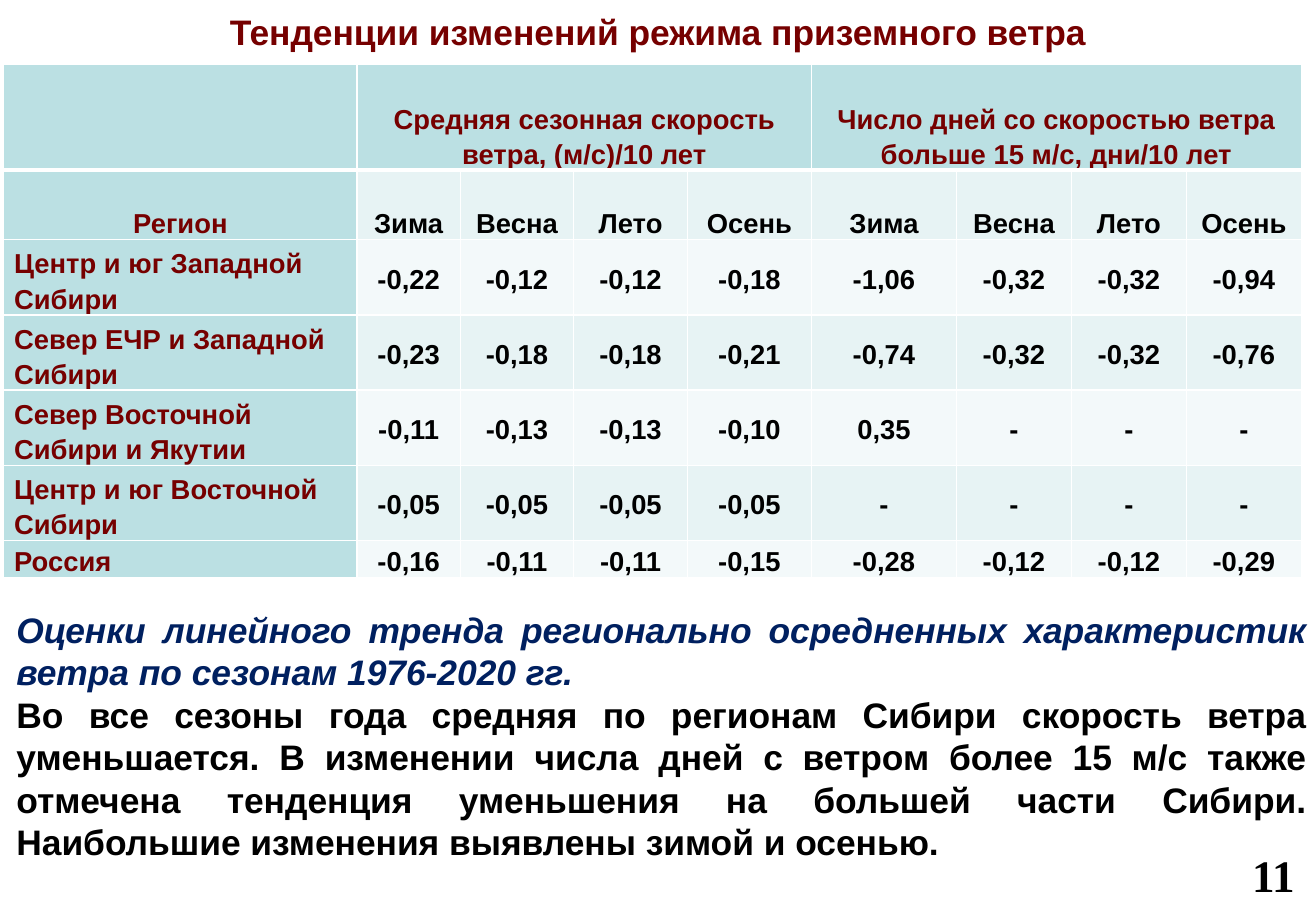
from dataclasses import dataclass

from lxml.etree import SubElement
from pptx import Presentation
from pptx.dml.color import RGBColor
from pptx.enum.text import MSO_ANCHOR as Anchor, MSO_AUTO_SIZE as AutoSize, PP_ALIGN as Align
from pptx.oxml.ns import qn
from pptx.util import Cm, Pt


@dataclass(frozen=True)
class Theme:
    maroon: str = "760000"
    navy: str = "002060"
    black: str = "000000"
    border: str = "FFFFFF"
    header_fill: str = "BBE0E3"
    odd_fill: str = "E7F3F4"
    even_fill: str = "F3F9FA"
    font: str = "Arial"
    number_font: str = "Times New Roman"
    table_size: int = 17
    text_size: int = 22
    number_size: int = 28


THEME = Theme()

TITLE = "Тенденции изменений режима приземного ветра"
CAPTION = ("Оценки линейного тренда регионально осредненных характеристик "
           "ветра по сезонам 1976-2020 гг.")
SUMMARY = ("Во все сезоны года средняя по регионам Сибири скорость ветра уменьшается. "
           "В изменении числа дней с ветром более 15 м/с также отмечена тенденция "
           "уменьшения на большей части Сибири. Наибольшие изменения выявлены зимой и осенью.")

SEASONS = ["Зима", "Весна", "Лето", "Осень"]
GROUPS = ["Средняя сезонная скорость ветра, (м/с)/10 лет",
          "Число дней со скоростью ветра больше 15 м/с, дни/10 лет"]
TRENDS = [
    ["Центр и юг Западной Сибири",
     "-0,22", "-0,12", "-0,12", "-0,18", "-1,06", "-0,32", "-0,32", "-0,94"],
    ["Север ЕЧР и Западной Сибири",
     "-0,23", "-0,18", "-0,18", "-0,21", "-0,74", "-0,32", "-0,32", "-0,76"],
    ["Север Восточной Сибири и Якутии",
     "-0,11", "-0,13", "-0,13", "-0,10", "0,35", "-", "-", "-"],
    ["Центр и юг Восточной Сибири",
     "-0,05", "-0,05", "-0,05", "-0,05", "-", "-", "-", "-"],
    ["Россия",
     "-0,16", "-0,11", "-0,11", "-0,15", "-0,28", "-0,12", "-0,12", "-0,29"],
]
COLUMN_WIDTHS = [7.75, 2.26, 2.49, 2.49, 2.72, 3.18, 2.52, 2.52, 2.52]
ROW_HEIGHTS = [2.31, 1.52, 1.65, 1.65, 1.65, 1.65, 0.81]


def style_paragraph(paragraph, size, color, align, font=THEME.font, italic=False):
    paragraph.alignment = align
    paragraph.font.name = font
    paragraph.font.size = Pt(size)
    paragraph.font.bold = True
    paragraph.font.italic = italic
    paragraph.font.color.rgb = RGBColor.from_string(color)


def add_text(slide, box, anchor=Anchor.TOP, wrap=True, insets=(0.28, 0.15)):
    """Add an empty text box and return its text frame."""
    frame = slide.shapes.add_textbox(*map(Cm, box)).text_frame
    frame.word_wrap = wrap
    frame.auto_size = AutoSize.SHAPE_TO_FIT_TEXT
    frame.vertical_anchor = anchor
    frame.margin_left = frame.margin_right = Cm(insets[0])
    frame.margin_top = frame.margin_bottom = Cm(insets[1])
    return frame


def set_borders(cell, top, bottom):
    properties = cell._tc.get_or_add_tcPr()
    for side, width in (("L", 1), ("R", 1), ("T", top), ("B", bottom)):
        line = SubElement(properties, qn(f"a:ln{side}"), w=str(Pt(width)))
        SubElement(SubElement(line, qn("a:solidFill")), qn("a:srgbClr"), val=THEME.border)


def fill_cell(cell, row, column, text):
    set_borders(cell, top=3 if row == 1 else 1, bottom=3 if row == 0 else 1)
    is_header = row == 0 or column == 0
    band = THEME.odd_fill if row % 2 else THEME.even_fill
    cell.fill.solid()
    cell.fill.fore_color.rgb = RGBColor.from_string(THEME.header_fill if is_header else band)

    cell.margin_left = cell.margin_right = Cm(0.23)
    cell.margin_top = cell.margin_bottom = 0
    cell.vertical_anchor = Anchor.BOTTOM if row < 2 or column == 0 else Anchor.MIDDLE
    cell.text = text
    paragraph = cell.text_frame.paragraphs[0]
    paragraph.line_spacing = 1.15
    style_paragraph(paragraph, THEME.table_size,
                    THEME.maroon if is_header else THEME.black,
                    Align.LEFT if row > 1 and column == 0 else Align.CENTER)


def add_trend_table(slide):
    group_row = [""]
    for group in GROUPS:
        group_row += [group] + [""] * (len(SEASONS) - 1)
    rows = [group_row, ["Регион"] + SEASONS * len(GROUPS)] + TRENDS

    table = slide.shapes.add_table(len(rows), len(COLUMN_WIDTHS), Cm(0.08), Cm(1.42),
                                   Cm(sum(COLUMN_WIDTHS)), Cm(sum(ROW_HEIGHTS))).table
    table.first_row = table.horz_banding = False
    for column, width in zip(table.columns, COLUMN_WIDTHS):
        column.width = Cm(width)
    for row, height in zip(table.rows, ROW_HEIGHTS):
        row.height = Cm(height)
    for row_index, values in enumerate(rows):
        for column_index, value in enumerate(values):
            fill_cell(table.cell(row_index, column_index), row_index, column_index, value)

    # Each group heading spans its four seasons
    for group_index in range(len(GROUPS)):
        first = 1 + group_index * len(SEASONS)
        table.cell(0, first).merge(table.cell(0, first + len(SEASONS) - 1))


def main():
    presentation = Presentation()
    presentation.slide_width, presentation.slide_height = Cm(28.85), Cm(20.14)
    slide = presentation.slides.add_slide(presentation.slide_layouts[6])

    # Trend table
    add_trend_table(slide)

    # Caption and conclusions
    frame = add_text(slide, (0.08, 13.16, 28.85, 5.92), Anchor.MIDDLE)
    caption = frame.paragraphs[0]
    caption.text = CAPTION
    style_paragraph(caption, THEME.text_size, THEME.navy, Align.JUSTIFY, italic=True)
    summary = frame.add_paragraph()
    summary.text = SUMMARY
    style_paragraph(summary, THEME.text_size, THEME.black, Align.JUSTIFY)

    # Title
    title = add_text(slide, (0, 0.08, 28.85, 1.22)).paragraphs[0]
    title.text = TITLE
    style_paragraph(title, THEME.text_size, THEME.maroon, Align.CENTER)

    # Slide number
    number = add_text(slide, (27.2, 18.44, 1.45, 1.45), wrap=False,
                      insets=(0.25, 0.13)).paragraphs[0]
    number.text = "11"
    style_paragraph(number, THEME.number_size, THEME.black, Align.JUSTIFY, THEME.number_font)

    presentation.save("out.pptx")


if __name__ == "__main__":
    main()
